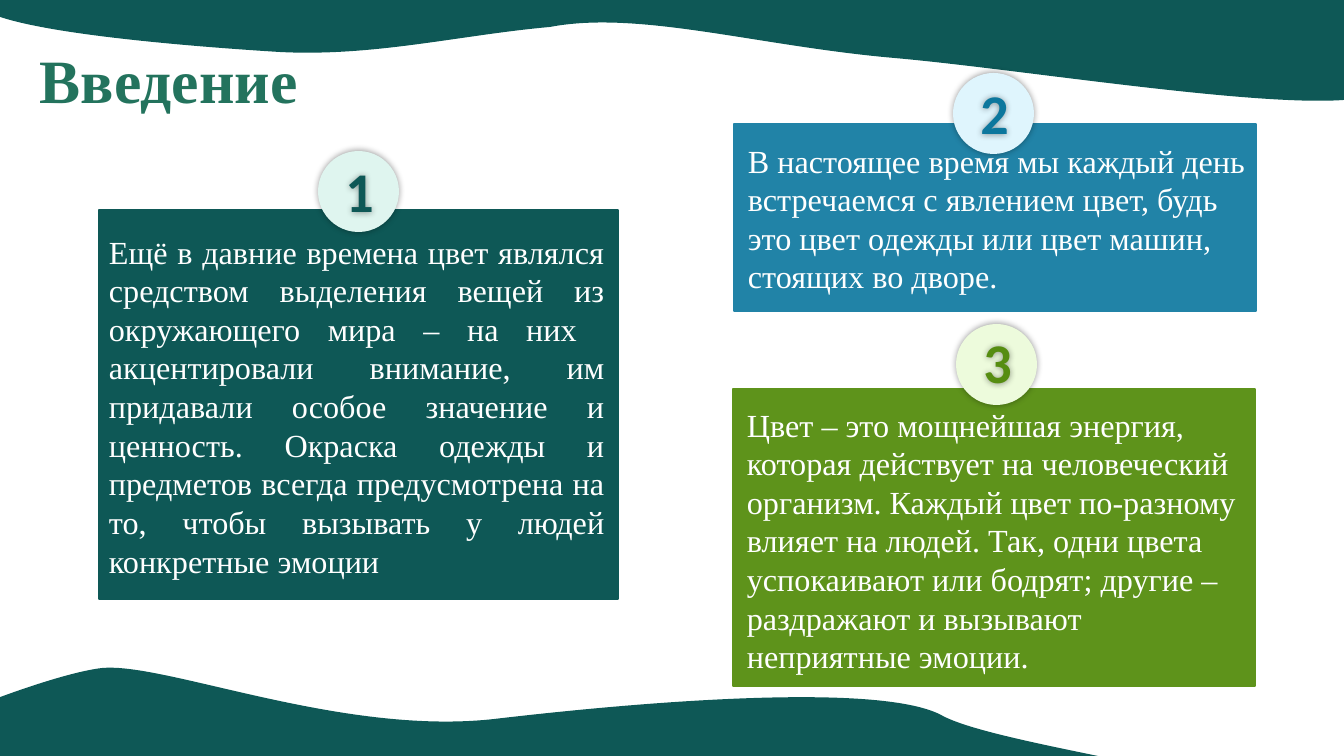
"""Build the introduction slide with waves and three numbered colour cards."""
from typing import NamedTuple

import lxml.etree
import pptx
import pptx.dml.color
import pptx.enum.shapes
import pptx.enum.text
import pptx.oxml.ns
import pptx.util

SCALE = 12192000 / 1344
SERIF = "Times New Roman"
ALIGN = pptx.enum.text.PP_ALIGN
SHAPE = pptx.enum.shapes.MSO_SHAPE
WAVE_COLOR = "0E5856"
BADGE_SIZE = 81


class Point(NamedTuple):
    """A position in px."""
    x: int
    y: int


class Box(NamedTuple):
    """A rectangle in px."""
    left: int
    top: int
    width: int
    height: int


class Curve(NamedTuple):
    """Two control points and the end of a cubic curve."""
    first: Point
    second: Point
    end: Point


class Wave(NamedTuple):
    """A closed outline of cubic curves."""
    start: Point
    curves: list[Curve]


class Card(NamedTuple):
    """A coloured panel with its text and numbered badge."""
    panel: Box
    text_box: Box
    badge: Point
    number_top: int
    color: str
    badge_color: str
    number_color: str
    align: ALIGN
    text: str


def curve(x1: int, y1: int, x2: int, y2: int, x3: int, y3: int) -> Curve:
    """Make a curve from its six coordinates."""
    return Curve(Point(x1, y1), Point(x2, y2), Point(x3, y3))


WAVES = [
    Wave(Point(-133, 779), [
        curve(-174, 760, 39, 675, 102, 668),
        curve(165, 662, 341, 736, 494, 719),
        curve(647, 701, 884, 682, 943, 716),
        curve(1004, 748, 1293, 780, 1259, 812),
        curve(1225, 846, 581, 786, 349, 781),
        curve(117, 775, -92, 798, -133, 779),
    ]),
    Wave(Point(1415, -53), [
        curve(1489, -33, 1431, 74, 1373, 95),
        curve(1312, 117, 1031, 70, 894, 58),
        curve(757, 46, 639, 10, 550, 27),
        curve(460, 35, 374, 57, 279, 52),
        curve(183, 46, -53, 28, -21, -6),
        curve(12, -41, 696, -19, 934, -27),
        curve(1174, -35, 1342, -74, 1415, -53),
    ]),
]

CORNER = Box(1135, 512, 319, 244)

CARDS = [
    Card(Box(99, 210, 519, 389), Box(99, 227, 516, 361), Point(318, 151), 152,
         "0E5856", "DFF5EF", "0E5856", ALIGN.JUSTIFY,
         "Ещё в давние времена цвет являлся средством выделения вещей из "
         "окружающего мира – на них  акцентировали внимание, им придавали "
         "особое значение и ценность. Окраска одежды и предметов всегда "
         "предусмотрена на то, чтобы вызывать у людей конкретные эмоции"),
    Card(Box(734, 124, 522, 187), Box(738, 136, 519, 166), Point(953, 73), 74,
         "2183A7", "DFF5FD", "0C779D", ALIGN.LEFT,
         "В настоящее время мы каждый день встречаемся с явлением цвет, "
         "будь это цвет одежды или цвет машин, стоящих во дворе."),
    Card(Box(733, 389, 522, 297), Box(737, 400, 516, 283), Point(956, 324), 323,
         "5E931B", "EDFBDC", "568D11", ALIGN.LEFT,
         "Цвет – это мощнейшая энергия, которая действует на человеческий "
         "организм. Каждый цвет по-разному влияет на людей. Так, одни цвета "
         "успокаивают или бодрят; другие – раздражают и вызывают неприятные "
         "эмоции."),
]


def emu(px: float) -> pptx.util.Emu:
    """Turn px into EMU."""
    return pptx.util.Emu(round(px * SCALE))


def rgb(color: str) -> pptx.dml.color.RGBColor:
    """Turn a hex string into a colour."""
    return pptx.dml.color.RGBColor.from_string(color)


def paint(s, color: str, outlined: bool = False) -> None:
    """Give a shape a flat fill, with a line of the same colour if outlined."""
    s.shadow.inherit = False
    s.fill.solid()
    s.fill.fore_color.rgb = rgb(color)
    if outlined:
        s.line.color.rgb = rgb(color)
        s.line.width = pptx.util.Pt(1)
    else:
        s.line.fill.background()


def add_glow(s) -> None:
    """Give a shape a soft black shadow on all sides."""
    s.shadow.inherit = False
    qn = pptx.oxml.ns.qn
    effects = s._element.spPr.find(qn("a:effectLst"))
    shadow = lxml.etree.SubElement(
        effects, qn("a:outerShdw"), blurRad=str(pptx.util.Pt(5)), dist="0",
        dir="0", algn="ctr", rotWithShape="0")
    color = lxml.etree.SubElement(shadow, qn("a:srgbClr"), val="000000")
    lxml.etree.SubElement(color, qn("a:alpha"), val="40000")


def add_shape(slide, kind: SHAPE, box: Box, color: str, outlined: bool = False):
    """Draw a flat preset shape."""
    s = slide.shapes.add_shape(kind, *map(emu, box))
    paint(s, color, outlined)
    return s


def add_text(slide, box: Box, text: str, size: int, font: str, color: str,
             align: ALIGN = ALIGN.LEFT, bold: bool = False):
    """Draw a wrapped text box with one paragraph."""
    s = slide.shapes.add_textbox(*map(emu, box))
    s.text_frame.word_wrap = True
    p = s.text_frame.paragraphs[0]
    p.text = text
    p.alignment = align
    p.font.size = pptx.util.Pt(size)
    p.font.name = font
    p.font.bold = bold
    p.font.color.rgb = rgb(color)
    return s


def add_wave(slide, wave: Wave) -> None:
    """Draw a wave as a closed freeform of cubic curves."""
    qn = pptx.oxml.ns.qn
    ends = [c.end for c in wave.curves]
    builder = slide.shapes.build_freeform(*wave.start, scale=SCALE)
    builder.add_line_segments(ends, close=True)
    s = builder.convert_to_shape()
    left, top = min(p.x for p in ends), min(p.y for p in ends)
    for segment, c in zip(list(s._element.iter(qn("a:lnTo"))), wave.curves):
        bend = lxml.etree.Element(qn("a:cubicBezTo"))
        for p in c:
            lxml.etree.SubElement(bend, qn("a:pt"), x=str(p.x - left),
                                  y=str(p.y - top))
        segment.getparent().replace(segment, bend)
    paint(s, WAVE_COLOR)


def add_card(slide, number: int, card: Card) -> None:
    """Draw a panel, its text and its badge."""
    add_shape(slide, SHAPE.RECTANGLE, card.panel, card.color, True)
    add_text(slide, card.text_box, card.text, 23, SERIF, "FFFFFF", card.align)
    x, y = card.badge
    circle = Box(x, y, BADGE_SIZE, BADGE_SIZE)
    add_glow(add_shape(slide, SHAPE.OVAL, circle, card.badge_color))
    add_glow(add_text(slide, Box(x + 1, card.number_top, BADGE_SIZE, 78),
                      str(number), 40, "Calibri", card.number_color,
                      ALIGN.CENTER, True))


def main() -> None:
    """Build and save the slide."""
    prs = pptx.Presentation()
    prs.slide_width, prs.slide_height = emu(1344), emu(756)
    slide = prs.slides.add_slide(prs.slide_layouts[6])
    for wave in WAVES:
        add_wave(slide, wave)
    title = add_text(slide, Box(30, 11, 1174, 146), "Введение", 44, SERIF,
                     "23735D", bold=True)
    title.text_frame.vertical_anchor = pptx.enum.text.MSO_ANCHOR.MIDDLE
    title.text_frame.paragraphs[0].line_spacing = 0.9
    add_shape(slide, SHAPE.RECTANGLE, CORNER, "FFFFFF", True)
    for number, card in enumerate(CARDS, 1):
        add_card(slide, number, card)
    prs.save("out.pptx")


if __name__ == "__main__":
    main()
